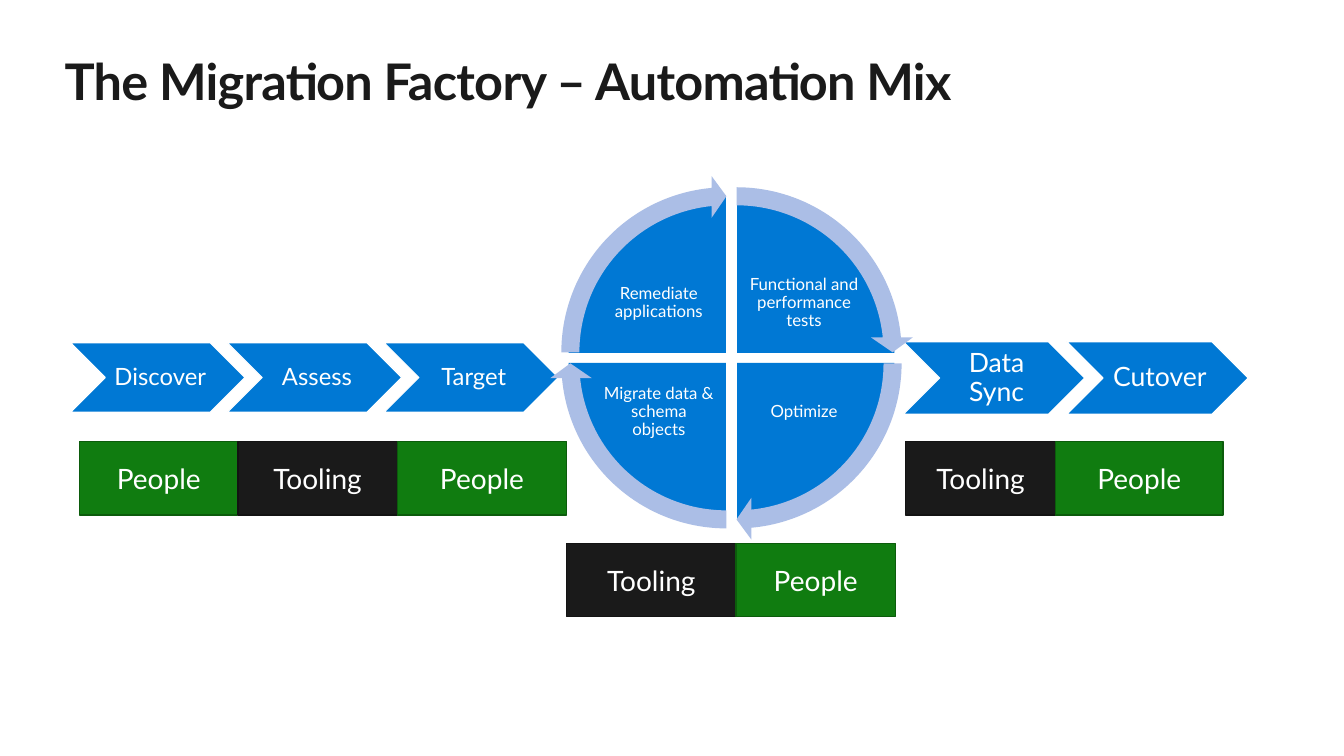
from pptx import Presentation
from pptx import util as u
from pptx.dml.color import RGBColor
from pptx.enum import shapes, text

COLORS = {
    "ink": "1A1A1A", "ink_edge": "131313",
    "green": "107C10", "green_edge": "0C5C0C",
    "blue": "0078D4", "arrow": "ABBEE6", "white": "FFFFFF",
}
FONT = "Lato"
SHAPE = shapes.MSO_SHAPE

deck = Presentation()
deck.slide_width, deck.slide_height = u.Inches(13.33), u.Inches(7.5)
slide = deck.slides.add_slide(deck.slide_layouts[5])


def write(box, words, size, color="white", margins=(0, 0, 0, 0),
          align=text.PP_ALIGN.CENTER, anchor=text.MSO_ANCHOR.MIDDLE, spacing=1.0):
    """Fill a box with one formatted paragraph and return its run."""
    frame = box.text_frame
    sides = ("margin_left", "margin_top", "margin_right", "margin_bottom")
    settings = {side: u.Inches(gap) for side, gap in zip(sides, margins)}
    settings.update(word_wrap=True, vertical_anchor=anchor)
    for name, value in settings.items():
        setattr(frame, name, value)
    paragraph = frame.paragraphs[0]
    paragraph.alignment, paragraph.line_spacing = align, spacing
    run = paragraph.add_run()
    run.text = words
    for name, value in {"name": FONT, "size": u.Pt(size)}.items():
        setattr(run.font, name, value)
    run.font.color.rgb = RGBColor.from_string(COLORS[color])
    return run


def draw(kind, left, top, width, height, fill, edge=None, adjustments=()):
    shape = slide.shapes.add_shape(kind, *map(u.Inches, (left, top, width, height)))
    shape.shadow.inherit = False
    shape.fill.solid()
    shape.fill.fore_color.rgb = RGBColor.from_string(COLORS[fill])
    if edge:
        shape.line.color.rgb = RGBColor.from_string(COLORS[edge])
        shape.line.width = u.Pt(0.85)
    else:
        shape.line.fill.background()
    for index, value in enumerate(adjustments):
        shape.adjustments[index] = value
    return shape


# Title
title = slide.shapes.title
title.left, title.top, title.width, title.height = map(u.Inches, (0.64, 0.5, 12.05, 0.61))
heading = write(title, "The Migration Factory – Automation Mix", 36, "ink",
                align=text.PP_ALIGN.LEFT, anchor=text.MSO_ANCHOR.TOP)
title.text_frame.auto_size = text.MSO_AUTO_SIZE.SHAPE_TO_FIT_TEXT
heading.font.bold = True
heading.font._element.set("spc", "-50")

# Who does the work: rows of touching blocks
work_rows = [
    (0.79, 4.38, [("People", 1.57), ("Tooling", 1.58), ("People", 1.68)]),
    (8.98, 4.38, [("Tooling", 1.49), ("People", 1.66)]),
    (5.62, 5.39, [("Tooling", 1.68), ("People", 1.58)]),
]
work_fill = {"People": "green", "Tooling": "ink"}
for left, top, blocks in work_rows:
    for worker, width in blocks:
        fill = work_fill[worker]
        block = draw(SHAPE.RECTANGLE, left, top, width, 0.73, fill, fill + "_edge")
        write(block, worker, 20, margins=(0.2, 0.16, 0.2, 0.16))
        left += width

# Stages before and after the cycle
stage_rows = [
    (0.7, 3.4, 1.73, 0.69, 1.555, 17, (0.07, 0.02, 0.02, 0.02),
     ["Discover", "Assess", "Target"]),
    (8.96, 3.39, 1.8, 0.72, 1.62, 19, (0.08, 0.03, 0.03, 0.03),
     ["Data Sync", "Cutover"]),
]
for left, top, width, height, pitch, size, margins, stages in stage_rows:
    for index, stage in enumerate(stages):
        chevron = draw(SHAPE.CHEVRON, left + index * pitch, top, width, height,
                       "blue", "white")
        write(chevron, stage, size, margins=margins, spacing=0.9)

# Cycle: clockwise quadrants from the top right (label, right half, bottom half)
quadrants = [
    ("Functional and performance tests", True, False),
    ("Optimize", True, True),
    ("Migrate data & schema objects", False, True),
    ("Remediate applications", False, False),
]
ADJ_PER_DEGREE = 0.6
HEAD_ANGLE = 3.275
starts = [angle * ADJ_PER_DEGREE for angle in (270, 0, 90, 180)]
quarter = 90 * ADJ_PER_DEGREE
full_turn = 360 * ADJ_PER_DEGREE

for (label, right, bottom), start in zip(quadrants, starts):
    draw(SHAPE.PIE, 5.75 if right else 5.64, 2.04 if bottom else 1.94, 3.12, 3.12,
         "blue", adjustments=(start, (start + quarter) % full_turn))
    caption = slide.shapes.add_textbox(
        u.Inches(7.4 if right else 5.96), u.Inches(3.66 if bottom else 2.58),
        u.Inches(1.15), u.Inches(0.85))
    write(caption, label, 12, margins=(0.02,) * 4, spacing=0.9)

for (label, right, bottom), start in zip(quadrants, starts):
    draw(SHAPE.CIRCULAR_ARROW, 5.55 if right else 5.45, 1.85 if bottom else 1.74,
         3.51, 3.51, "arrow",
         adjustments=(0.051, HEAD_ANGLE, start + quarter - HEAD_ANGLE, start, 0.059))

deck.save("out.pptx")
